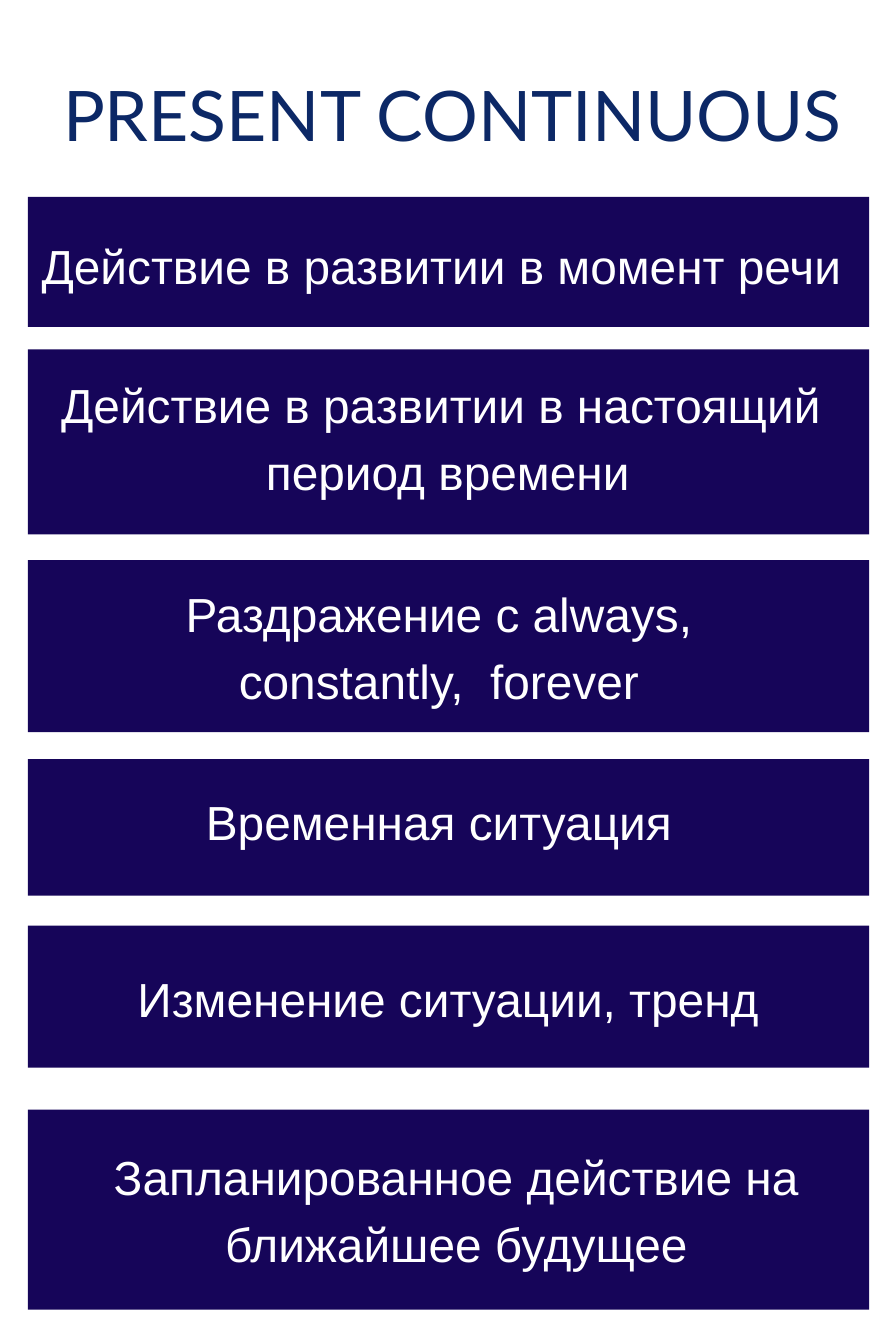
"""Build a poster slide listing the uses of the Present Continuous tense."""
from pptx import Presentation
from pptx.dml.color import RGBColor
from pptx.enum.shapes import MSO_SHAPE
from pptx.enum.text import PP_ALIGN
from pptx.util import Inches, Pt

COLORS = {"title": "0C2866", "band": "160559", "text": "FFFFFF"}
BAND_LEFT, BAND_WIDTH = 0.26, 7.82

USES = [
    (1.83, 1.21, (0.38, 2.11, 7.58, 0.63), "Действие в развитии в момент речи "),
    (3.25, 1.72, (0, 3.41, 8.33, 1.25), "Действие в развитии в настоящий \nпериод времени"),
    (5.21, 1.60, (0.71, 5.35, 6.87, 1.25), "Раздражение с always,  constantly,  forever "),
    (7.06, 1.27, (1.88, 7.28, 4.53, 0.63), "Временная ситуация "),
    (8.61, 1.32, (1.26, 8.93, 5.82, 0.63), "Изменение ситуации, тренд"),
    (10.32, 1.86, (0.83, 10.59, 6.83, 1.25), "Запланированное действие на ближайшее будущее"),
]

prs = Presentation()
prs.slide_width, prs.slide_height = Inches(8.33), Inches(12.5)
slide = prs.slides.add_slide(prs.slide_layouts[6])


def add_text(area, text, font_name, size, line_height, color):
    frame = slide.shapes.add_textbox(*map(Inches, area)).text_frame
    frame.word_wrap = True
    frame.margin_left = frame.margin_right = frame.margin_top = frame.margin_bottom = 0
    frame.text = text
    for line in frame.paragraphs:
        line.alignment = PP_ALIGN.CENTER
        line.line_spacing = Pt(line_height)
        line.font.name = font_name
        line.font.size = Pt(size)
        line.font.color.rgb = RGBColor.from_string(COLORS[color])


add_text((0.25, 0.58, 8.08, 0.84), "PRESENT CONTINUOUS ", "Lato", 46.7, 62.6, "title")

for top, height, text_area, use in USES:
    band = slide.shapes.add_shape(
        MSO_SHAPE.RECTANGLE, Inches(BAND_LEFT), Inches(top), Inches(BAND_WIDTH), Inches(height))
    band.shadow.inherit = False
    band.fill.solid()
    band.fill.fore_color.rgb = RGBColor.from_string(COLORS["band"])
    band.line.fill.background()
    add_text(text_area, use, "Arial", 32, 44.8, "text")

prs.save("out.pptx")
